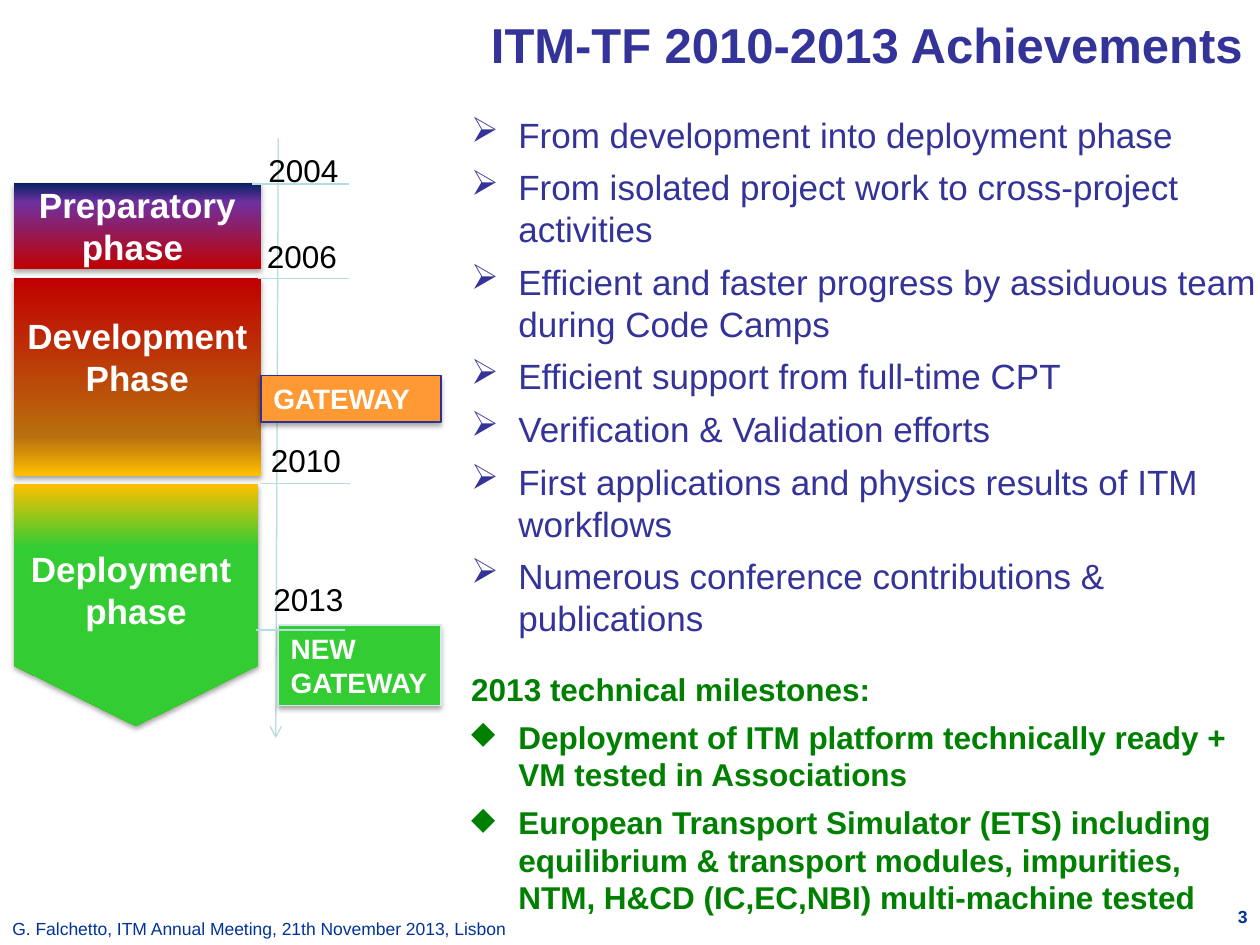
from lxml.etree import SubElement
from pptx import Presentation
from pptx.dml.color import RGBColor
from pptx.enum.shapes import MSO_CONNECTOR, MSO_SHAPE
from pptx.enum.text import MSO_ANCHOR, PP_ALIGN
from pptx.oxml.ns import qn
from pptx.util import Cm, Pt

NAVY, GREEN, WHITE, BLUE = "333399", "008000", "FFFFFF", "003399"
AXIS, LIME = "B6DCDF", "33CC33"


def rgb(value):
    return RGBColor.from_string(value)


class Deck:
    """Holds the text style and the current slide, and draws its elements."""

    font = "Arial"

    def __init__(self, prs):
        self.slide = prs.slides.add_slide(prs.slide_layouts[5])

    def fill_text(self, sp, lines, size, color, bold=False, align=PP_ALIGN.LEFT,
                  anchor=MSO_ANCHOR.TOP, wrap=True, bullets=None):
        tf = sp.text_frame
        tf.word_wrap = wrap
        tf.vertical_anchor = anchor
        for i, line in enumerate(lines):
            p = tf.paragraphs[0] if i == 0 else tf.add_paragraph()
            p.alignment = align
            if bullets:
                self.bullet(p, bullets[i])
                p.space_before = Pt(0.3 * size if i else 0)
            r = p.add_run()
            r.text = line
            r.font.name = self.font
            r.font.size = Pt(size)
            r.font.bold = bold
            r.font.color.rgb = rgb(color)

    def bullet(self, p, char):
        pPr = p._p.get_or_add_pPr()
        pPr.set("marL", str(Cm(0.95)))
        pPr.set("indent", str(Cm(-0.95)))
        if char:
            SubElement(pPr, qn("a:buChar"), char=char)

    def title(self, box, text):
        sp = self.slide.shapes.title
        sp.left, sp.top, sp.width, sp.height = map(Cm, box)
        self.fill_text(sp, [text], 28, NAVY, True, PP_ALIGN.RIGHT, MSO_ANCHOR.MIDDLE)

    def text(self, box, lines, size, color, **style):
        sp = self.slide.shapes.add_textbox(*map(Cm, box))
        self.fill_text(sp, lines, size, color, **style)

    def line(self, x1, y1, x2, y2, arrow=False):
        ends = map(Cm, (x1, y1, x2, y2))
        cx = self.slide.shapes.add_connector(MSO_CONNECTOR.STRAIGHT, *ends)
        cx.line.color.rgb = rgb(AXIS)
        cx.line.width = Pt(0.75)
        if arrow:
            SubElement(cx.line._get_or_add_ln(), qn("a:tailEnd"), type="arrow")
        SubElement(cx._element.spPr, qn("a:effectLst"))

    def shape(self, kind, box):
        sp = self.slide.shapes.add_shape(kind, *map(Cm, box))
        sp.shadow.inherit = False
        effects = sp._element.spPr.find(qn("a:effectLst"))
        shadow = SubElement(effects, qn("a:outerShdw"), blurRad=str(Pt(3.1)),
                            dist=str(Pt(1.8)), dir="5400000", rotWithShape="0")
        color = SubElement(shadow, qn("a:srgbClr"), val="000000")
        SubElement(color, qn("a:alpha"), val="35000")
        return sp

    def phase(self, kind, box, lines, stops, angle=270, wrap=True):
        sp = self.shape(kind, box)
        sp.line.fill.background()
        sp.fill.gradient()
        sp.fill.gradient_angle = angle
        gs_list = next(sp._element.spPr.iter(qn("a:gsLst")))
        gs_list.clear()
        for pos, color in stops:
            gs = SubElement(gs_list, qn("a:gs"), pos=str(pos * 1000))
            SubElement(gs, qn("a:srgbClr"), val=color)
        self.fill_text(sp, lines, 20, WHITE, True, PP_ALIGN.CENTER,
                       MSO_ANCHOR.MIDDLE, wrap)
        return sp

    def tag(self, box, text, fill, outline):
        sp = self.shape(MSO_SHAPE.RECTANGLE, box)
        sp.fill.solid()
        sp.fill.fore_color.rgb = rgb(fill)
        sp.line.color.rgb = rgb(outline)
        sp.line.width = Pt(0.75)
        self.fill_text(sp, [text], 16, WHITE, True, anchor=MSO_ANCHOR.MIDDLE)


def main():
    prs = Presentation()
    prs.slide_width, prs.slide_height = Cm(25.4), Cm(19.05)
    s = Deck(prs)
    s.title((0, 0.13, 25.3, 1.52), "ITM-TF 2010-2013 Achievements")

    achievements = [
        "From development into deployment phase",
        "From isolated project work to cross-project activities",
        "Efficient and faster progress by assiduous team during Code Camps",
        "Efficient support from full-time CPT",
        "Verification & Validation efforts",
        "First applications and physics results of ITM workflows",
        "Numerous conference contributions & publications",
    ]
    s.text((9.25, 2.16, 16.66, 10.49), achievements, 20, NAVY,
           bullets="➢" * len(achievements))

    s.line(5.61, 2.79, 5.56, 14.88, arrow=True)
    s.phase(MSO_SHAPE.RECTANGLE, (0.28, 3.68, 4.98, 1.75), ["Preparatory phase "],
            [(0, "002060"), (23, "7030A0"), (100, "C00000")])
    development = s.phase(
        MSO_SHAPE.RECTANGLE, (0.28, 5.61, 4.98, 3.99), ["Development Phase"],
        [(0, "C00000"), (80, "B86F0E"), (100, "FFC000")])
    development.text_frame.margin_bottom = Cm(0.95)
    deployment = s.phase(
        MSO_SHAPE.PENTAGON, (0.3, 9.73, 4.88, 4.93), ["Deployment ", "phase"],
        [(0, "FFC000"), (26, LIME), (100, LIME)], angle=0, wrap=False)
    deployment.adjustments[0] = 0.25
    deployment.rotation = 90
    deployment.text_frame._txBody.bodyPr.set("vert", "vert270")

    s.tag((5.26, 7.57, 3.63, 0.94), "GATEWAY", "FF9933", "2F2F98")
    s.tag((5.61, 12.6, 3.28, 1.63), "NEW GATEWAY", LIME, "D5E8EA")

    years = [
        ("2004", 5.16, 2.92, 5.08, 7.04, 3.71),
        ("2006", 5.13, 4.65, 5.21, 7.04, 5.61),
        ("2010", 5.21, 8.76, 5.26, 7.06, 9.75),
        ("2013", 5.26, 11.56, 5.16, 6.96, 12.7),
    ]
    for year, left, top, start, end, y in years:
        s.line(start, y, end, y)
        s.text((left, top, 1.93, 1.02), [year], 18, "000000", wrap=False)

    milestones = [
        "2013 technical milestones:",
        "Deployment of ITM platform technically ready + VM tested in Associations",
        "European Transport Simulator (ETS) including equilibrium & transport "
        "modules, impurities, NTM, H&CD (IC,EC,NBI) multi-machine tested",
    ]
    s.text((9.25, 13.39, 16.26, 5.33), milestones, 18, GREEN, bold=True,
           bullets=["", "◆", "◆"])

    s.text((0, 18.39, 10.74, 0.66),
           ["G. Falchetto, ITM Annual Meeting, 21th November 2013, Lisbon"], 10, BLUE)
    s.text((23.29, 18.14, 2.11, 0.91), ["3"], 10, BLUE, bold=True,
           align=PP_ALIGN.RIGHT)
    prs.save("out.pptx")


if __name__ == "__main__":
    main()
